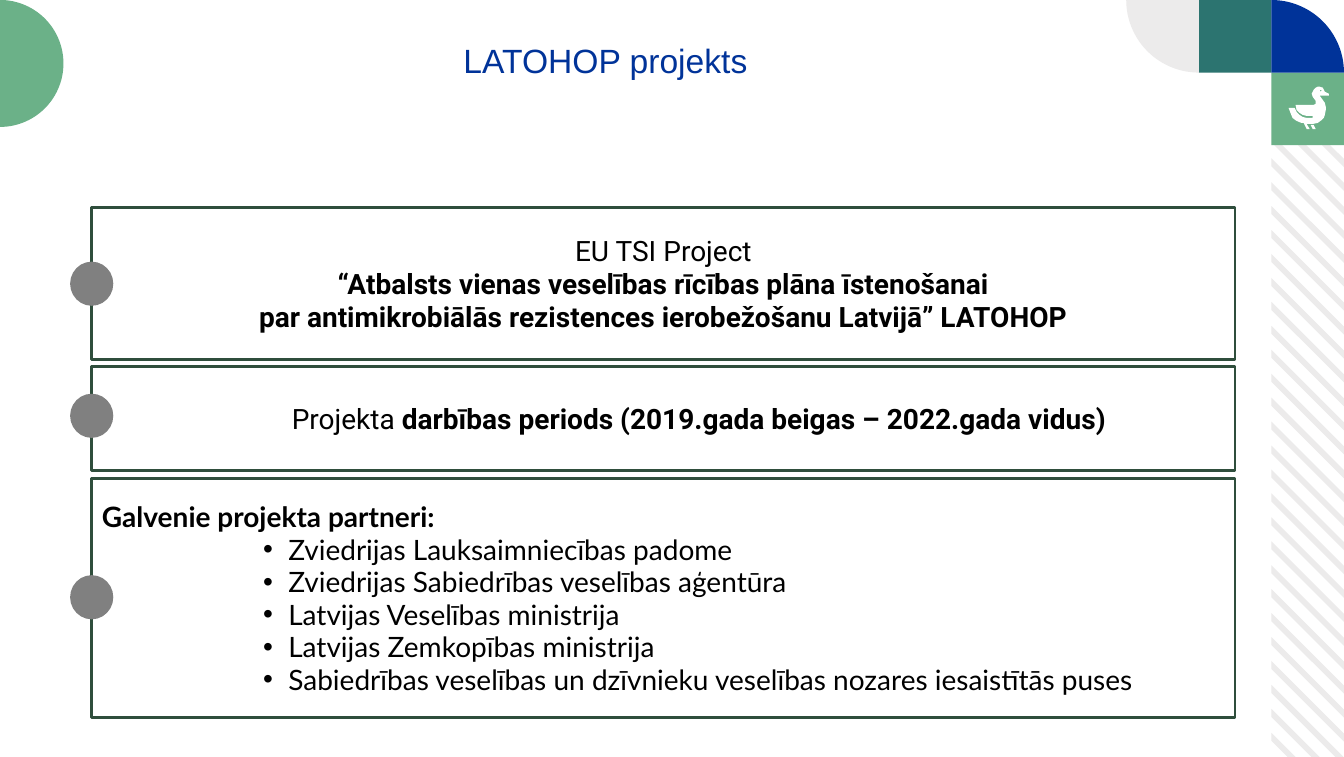
from math import cos, radians, sin

from lxml import etree
from pptx import Presentation
from pptx.dml.color import RGBColor
from pptx.enum import shapes, text
from pptx.oxml import ns
from pptx.util import Inches, Pt

BLUE = RGBColor(0x00, 0x33, 0x99)
TEAL = RGBColor(0x2C, 0x74, 0x70)
GREEN = RGBColor(0x6B, 0xB1, 0x88)
DARK_GREEN = RGBColor(0x2F, 0x4E, 0x3C)
PALE = RGBColor(0xEC, 0xEB, 0xEB)
GRAY = RGBColor(0x80, 0x80, 0x80)
WHITE = RGBColor(0xFF, 0xFF, 0xFF)
BLACK = RGBColor(0x00, 0x00, 0x00)

WIDTH, HEIGHT = 13.33, 7.51
TILE = 0.72
EDGE = WIDTH - TILE
PANEL_LEFT, PANEL_WIDTH = 0.91, 11.34
STRIPE_STEP, STRIPE_THICKNESS = 0.2375, 0.08

DUCK_BODY = [
    (13.18, 0.93), (13.14, 0.91), (13.12, 0.87), (13.09, 0.86), (13.07, 0.86),
    (13.05, 0.87), (13.03, 0.89), (13.02, 0.91), (13.01, 0.93), (13.02, 0.96),
    (13.05, 1), (13.05, 1.03), (13.03, 1.04), (12.85, 1.04), (12.86, 1.09),
    (12.89, 1.12), (12.92, 1.14), (12.96, 1.15), (13.02, 1.15), (13.02, 1.17),
    (12.96, 1.17), (12.92, 1.16), (12.89, 1.14), (12.86, 1.11), (12.84, 1.07),
    (12.78, 1.07), (12.8, 1.12), (12.82, 1.17), (12.86, 1.2), (12.91, 1.22),
    (12.93, 1.22), (12.96, 1.28), (12.99, 1.28), (12.96, 1.23), (13.02, 1.23),
    (13.07, 1.22), (13.11, 1.19), (13.13, 1.17), (13.14, 1.14), (13.15, 1.09),
    (13.15, 1.06), (13.14, 1.02), (13.09, 0.95), (13.18, 0.95)]
DUCK_LEG = [(13.05, 1.28), (13.03, 1.24), (13, 1.24), (13.02, 1.28)]
DUCK_EYE = [(13.09, 0.9), (13.1, 0.89), (13.11, 0.9), (13.1, 0.91)]

PARTNERS = [
    "Zviedrijas Lauksaimniecības padome",
    "Zviedrijas Sabiedrības veselības aģentūra",
    "Latvijas Veselības ministrija",
    "Latvijas Zemkopības ministrija",
    "Sabiedrības veselības un dzīvnieku veselības nozares iesaistītās puses",
]


def paint(shape, fill, line=None):
    shape.fill.solid()
    shape.fill.fore_color.rgb = fill
    if line is None:
        shape.line.fill.background()
    else:
        shape.line.color.rgb = line
        shape.line.width = Pt(2)


def add_preset(slide, kind, left, top, width, height, fill, line=None):
    shape = slide.shapes.add_shape(
        kind, Inches(left), Inches(top), Inches(width), Inches(height))
    shape.shadow.inherit = False
    paint(shape, fill, line)
    return shape


def add_outline(slide, contours, fill):
    contours = [[(Inches(x), Inches(y)) for x, y in c] for c in contours]
    builder = slide.shapes.build_freeform(*contours[0][0])
    builder.add_line_segments(contours[0][1:], close=True)
    for contour in contours[1:]:
        builder.move_to(*contour[0])
        builder.add_line_segments(contour[1:], close=True)
    outline = builder.convert_to_shape()
    outline.shadow.inherit = False
    paint(outline, fill)


def add_sector(slide, x, y, radius, start, end, fill):
    arc = [(x + radius * cos(radians(a)), y + radius * sin(radians(a)))
           for a in range(start, end + 1, 3)]
    add_outline(slide, [[(x, y)] + arc], fill)


def add_stripes(slide):
    top = 2 * TILE

    def edge(offset):
        start, end = max(0, top - offset), min(TILE, HEIGHT - offset)
        return [(EDGE + x, offset + x) for x in (start, end)]

    stripes = []
    for row in range(-3, 25):
        offset = 1.57 + row * STRIPE_STEP
        stripes.append(edge(offset) + edge(offset + STRIPE_THICKNESS)[::-1])
    add_outline(slide, stripes, PALE)


def set_indent(paragraph, margin, hanging=0, bullet=None):
    properties = paragraph._p.get_or_add_pPr()
    properties.set("marL", str(Inches(margin)))
    properties.set("indent", str(Inches(hanging)))
    if bullet:
        font = etree.SubElement(properties, ns.qn("a:buFont"))
        font.set("typeface", "Arial")
        etree.SubElement(properties, ns.qn("a:buChar")).set("char", bullet)
    else:
        etree.SubElement(properties, ns.qn("a:buNone"))


def write(shape, runs, first=False, align=text.PP_ALIGN.CENTER, font="Roboto",
          size=20, color=BLACK, margin=0, hanging=0, bullet=None, level=0,
          spacing=Pt(23.3)):
    frame = shape.text_frame
    frame.word_wrap = True
    frame.auto_size = text.MSO_AUTO_SIZE.NONE
    frame.vertical_anchor = text.MSO_ANCHOR.MIDDLE
    paragraph = frame.paragraphs[0] if first else frame.add_paragraph()
    set_indent(paragraph, margin, hanging, bullet)
    paragraph.level = level
    paragraph.alignment = align
    paragraph.line_spacing = spacing
    paragraph.space_before = Pt(0)
    for words, bold in runs:
        run = paragraph.add_run()
        run.text = words
        run.font.name = font
        run.font.size = Pt(size)
        run.font.bold = bold
        run.font.color.rgb = color


def place(shape, left, top, width, height):
    shape.left, shape.top = Inches(left), Inches(top)
    shape.width, shape.height = Inches(width), Inches(height)


def add_panel(slide, top, height):
    return add_preset(slide, shapes.MSO_SHAPE.RECTANGLE, PANEL_LEFT, top,
                      PANEL_WIDTH, height, WHITE, DARK_GREEN)


def add_marker(slide, top):
    add_preset(slide, shapes.MSO_SHAPE.FLOWCHART_CONNECTOR, 0.71, top,
               0.4, 0.41, GRAY, GRAY)


def add_decoration(slide):
    square = shapes.MSO_SHAPE.RECTANGLE
    add_stripes(slide)
    add_preset(slide, square, EDGE - TILE, 0, TILE, TILE, TEAL)
    add_preset(slide, square, EDGE, TILE, TILE, TILE, GREEN)
    add_sector(slide, EDGE, TILE, TILE, -90, 0, BLUE)
    add_sector(slide, EDGE - TILE, 0, TILE, 90, 180, PALE)
    add_sector(slide, 0, 0.63, 0.63, -90, 90, GREEN)
    add_outline(slide, [DUCK_BODY, DUCK_LEG, DUCK_EYE], WHITE)


def main():
    deck = Presentation()
    deck.slide_width, deck.slide_height = Inches(WIDTH), Inches(HEIGHT)
    slide = deck.slides.add_slide(deck.slide_layouts[1])
    add_decoration(slide)

    title = slide.shapes.title
    place(title, 0.83, 0.34, 10.35, 0.52)
    write(title, [("LATOHOP projekts", False)], first=True, font="Arial",
          size=24, color=BLUE, spacing=1.0)

    project = add_panel(slide, 2.06, 1.51)
    write(project, [("EU TSI Project", False)], first=True)
    write(project, [("“Atbalsts vienas veselības rīcības plāna īstenošanai", True)])
    write(project, [("par antimikrobiālās rezistences ierobežošanu Latvijā” LATOHOP", True)])

    period = add_panel(slide, 3.64, 1.03)
    write(period, [("Projekta ", False),
                   ("darbības periods (2019.gada beigas – 2022.gada vidus)", True)],
          first=True, margin=0.71)

    partners = slide.placeholders[1]
    place(partners, PANEL_LEFT, 4.75, PANEL_WIDTH, 2.37)
    paint(partners, WHITE, DARK_GREEN)
    write(partners, [("Galvenie projekta partneri:", True)], first=True,
          align=text.PP_ALIGN.LEFT, font="Lato")
    for partner in PARTNERS:
        write(partners, [(partner, False)], align=text.PP_ALIGN.LEFT, font="Lato",
              margin=1.85, hanging=-0.25, bullet="•", level=1)

    for top in (2.61, 3.92, 5.72):
        add_marker(slide, top)
    deck.save("out.pptx")


if __name__ == "__main__":
    main()
